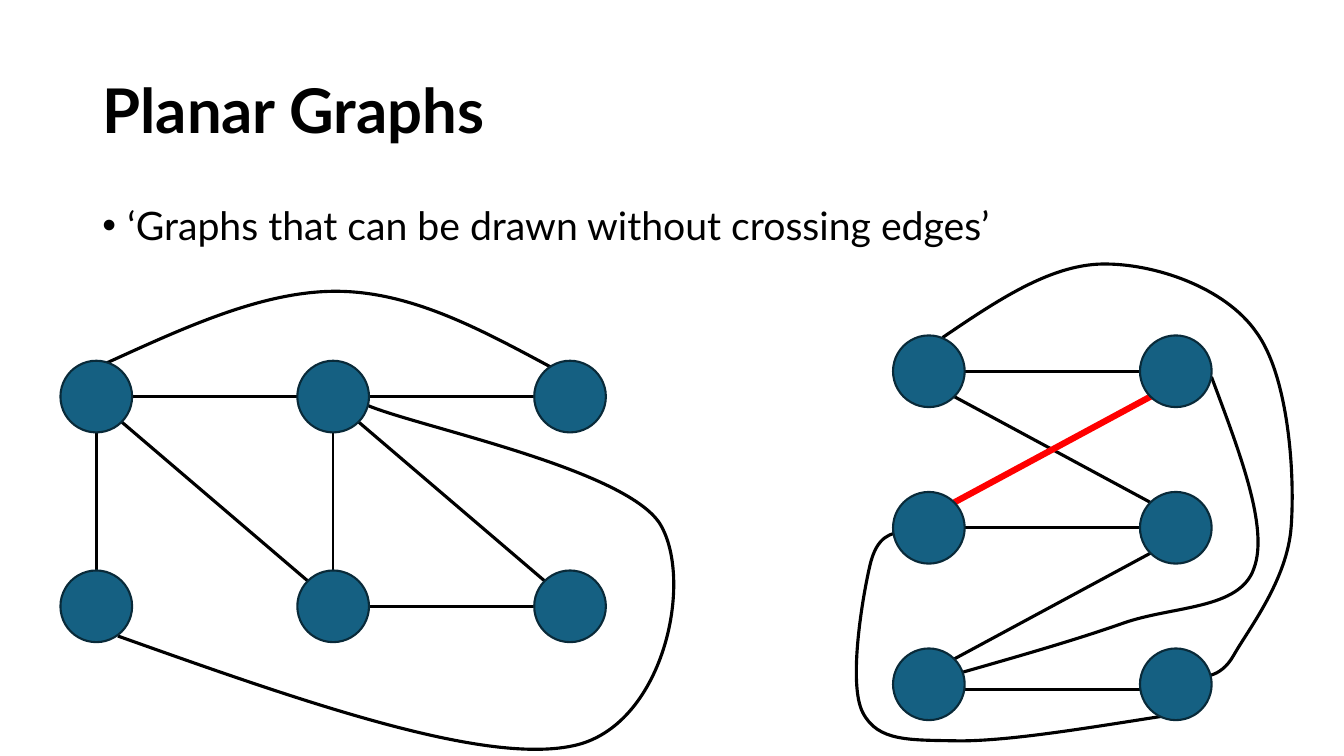
"""Build a slide that shows two graphs, one planar and one with a crossing edge."""
from lxml import etree
from pptx import Presentation
from pptx.dml.color import RGBColor
from pptx.enum.shapes import MSO_CONNECTOR, MSO_SHAPE
from pptx.enum.text import MSO_ANCHOR, PP_ALIGN
from pptx.oxml.ns import qn
from pptx.util import Pt

LINE, OVAL = MSO_CONNECTOR.STRAIGHT, MSO_SHAPE.OVAL
MIDDLE, LEFT = MSO_ANCHOR.MIDDLE, PP_ALIGN.LEFT

TITLE = "Planar Graphs"
BODY = "‘Graphs that can be drawn without crossing edges’"
FONT = "Lato"
COLORS = {"ink": "000000", "node": "156082", "rim": "092A39", "cross": "FF0000"}
RADIUS = 25.6
STEPS = 24

GRAPHS = [
    {
        "origin": (68.8, 283.3), "gap": (169.2, 149.8), "size": (3, 2),
        "edges": [
            ((0, 0), (1, 1), "ink", 2.25, 0),
            ((0, 0), (1, 0), "ink", 2.25, 0),
            ((1, 0), (2, 0), "ink", 2.25, 0),
            ((1, 0), (1, 1), "ink", 1.5, 0),
            ((2, 1), (1, 1), "ink", 2.25, 0),
            ((2, 1), (1, 0), "ink", 2.25, 0),
            ((0, 0), (0, 1), "ink", 2.25, 0),
        ],
        "curves": [
            [(84.2, 454.3), (213.8, 500.4), (344.2, 546.5), (409, 532.8),
             (473.8, 519.8), (496.1, 415.4), (471.6, 374.4),
             (446.4, 334.1), (293, 303.8), (260.6, 288.7)],
            [(394.6, 262.8), (344.9, 236.2), (295.2, 208.8), (241.9, 208.1),
             (188.6, 207.4), (131.8, 234), (74.9, 259.9)],
        ],
    },
    {
        "origin": (663.5, 265.2), "gap": (176.4, 111.8), "size": (2, 3),
        "edges": [
            ((0, 0), (1, 0), "ink", 2.25, 0),
            ((0, 1), (1, 1), "ink", 2.25, 0),
            ((0, 2), (1, 2), "ink", 2.25, 3.6),
            ((0, 2), (1, 1), "ink", 2.25, 0),
            ((0, 0), (1, 1), "ink", 2.25, 0),
            ((0, 1), (1, 0), "cross", 4.5, 0),
        ],
        "curves": [
            [(865.4, 269.3), (885.6, 323.3), (906.5, 377.3), (895.7, 406.1),
             (885.6, 435.6), (838.1, 432.7), (802.8, 445),
             (768.2, 457.2), (727.9, 468.7), (687.6, 480.2)],
            [(673.2, 241.2), (711.4, 215.3), (749.5, 189.4), (787, 188.6),
             (824.4, 187.9), (874.8, 205.2), (897.1, 236.9),
             (920.2, 267.8), (925.2, 337.7), (922.3, 376.6),
             (919.4, 414.7), (891.4, 450), (881.3, 468),
             (871.2, 486), (856.8, 482.4), (860.4, 483.1)],
            [(833, 511.2), (777.6, 519.8), (722.2, 529.2), (685.4, 529.2),
             (649.4, 528.5), (627.1, 529.9), (616.3, 509),
             (605.5, 488.2), (616.3, 425.5), (621.4, 403.9),
             (626.4, 382.3), (636.5, 380.9), (646.6, 379.4)],
        ],
    },
]


def rgb(name):
    return RGBColor.from_string(COLORS[name])


def stroke(line, color, width):
    line.color.rgb = rgb(color)
    line.width = Pt(width)


def place(shape, left, top, width, height):
    shape.left, shape.top = Pt(left), Pt(top)
    shape.width, shape.height = Pt(width), Pt(height)


def write(shape, text, size, bold=False):
    frame = shape.text_frame
    frame.word_wrap = True
    frame.text = text
    par = frame.paragraphs[0]
    par.alignment = LEFT
    par.line_spacing = 0.9
    par.font.name, par.font.size, par.font.bold = FONT, Pt(size), bold
    par.font.color.rgb = rgb("ink")
    return par


def add_bullet(par):
    props = par._p.get_or_add_pPr()
    props.set("marL", str(Pt(18)))
    props.set("indent", str(Pt(-18)))
    font = etree.Element(qn("a:buFont"), typeface="Arial")
    mark = etree.Element(qn("a:buChar"), char="•")
    props.find(qn("a:defRPr")).addprevious(font)
    font.addnext(mark)


def center(graph, node):
    return [start + gap * index for start, gap, index
            in zip(graph["origin"], graph["gap"], node)]


def rim_point(graph, node, other):
    signs = [(b > a) - (b < a) for a, b in zip(node, other)]
    reach = RADIUS / sum(map(abs, signs)) ** 0.5
    return [mid + sign * reach for mid, sign in zip(center(graph, node), signs)]


def add_edge(shapes, graph, start, end, color, width, shift):
    x1, y1 = rim_point(graph, start, end)
    x2, y2 = rim_point(graph, end, start)
    edge = shapes.add_connector(LINE, Pt(x1), Pt(y1 + shift), Pt(x2), Pt(y2 + shift))
    stroke(edge.line, color, width)
    etree.SubElement(edge._element.spPr, qn("a:effectLst"))


def bezier(points, t):
    weights = ((1 - t) ** 3, 3 * t * (1 - t) ** 2, 3 * t * t * (1 - t), t ** 3)
    return tuple(Pt(sum(w * value for w, value in zip(weights, axis)))
                 for axis in zip(*points))


def add_curve(shapes, points):
    trail = [bezier(points[i:i + 4], step / STEPS)
             for i in range(0, len(points) - 1, 3)
             for step in range(1, STEPS + 1)]
    x, y = points[0]
    builder = shapes.build_freeform(Pt(x), Pt(y))
    builder.add_line_segments(trail, close=False)
    curve = builder.convert_to_shape()
    bend(curve, points)
    curve.shadow.inherit = False
    curve.fill.background()
    stroke(curve.line, "ink", 2.25)


def bend(curve, points):
    outline = next(curve._element.iter(qn("a:path")))
    for part in outline.findall(qn("a:lnTo")):
        outline.remove(part)
    for i in range(1, len(points), 3):
        arc = etree.SubElement(outline, qn("a:cubicBezTo"))
        for x, y in points[i:i + 3]:
            etree.SubElement(arc, qn("a:pt"), x=str(Pt(x) - curve.left),
                             y=str(Pt(y) - curve.top))


def add_node(shapes, x, y):
    node = shapes.add_shape(OVAL, Pt(x - RADIUS), Pt(y - RADIUS),
                            Pt(2 * RADIUS), Pt(2 * RADIUS))
    node.shadow.inherit = False
    node.fill.solid()
    node.fill.fore_color.rgb = rgb("node")
    stroke(node.line, "rim", 1.5)


def main():
    deck = Presentation()
    deck.slide_width, deck.slide_height = Pt(960), Pt(540)
    slide = deck.slides.add_slide(deck.slide_layouts[5])
    shapes = slide.shapes

    place(shapes.title, 66, 28.8, 828, 104.4)
    write(shapes.title, TITLE, 44, bold=True)
    shapes.title.text_frame.vertical_anchor = MIDDLE

    body = shapes.add_textbox(Pt(66), Pt(144), Pt(828), Pt(342.7))
    par = write(body, BODY, 28)
    par.space_before = Pt(10)
    add_bullet(par)

    for graph in GRAPHS:
        for curve in graph["curves"]:
            add_curve(shapes, curve)
        for edge in graph["edges"]:
            add_edge(shapes, graph, *edge)
        cols, rows = graph["size"]
        for col in range(cols):
            for row in range(rows):
                add_node(shapes, *center(graph, (col, row)))

    deck.save("out.pptx")


if __name__ == "__main__":
    main()
